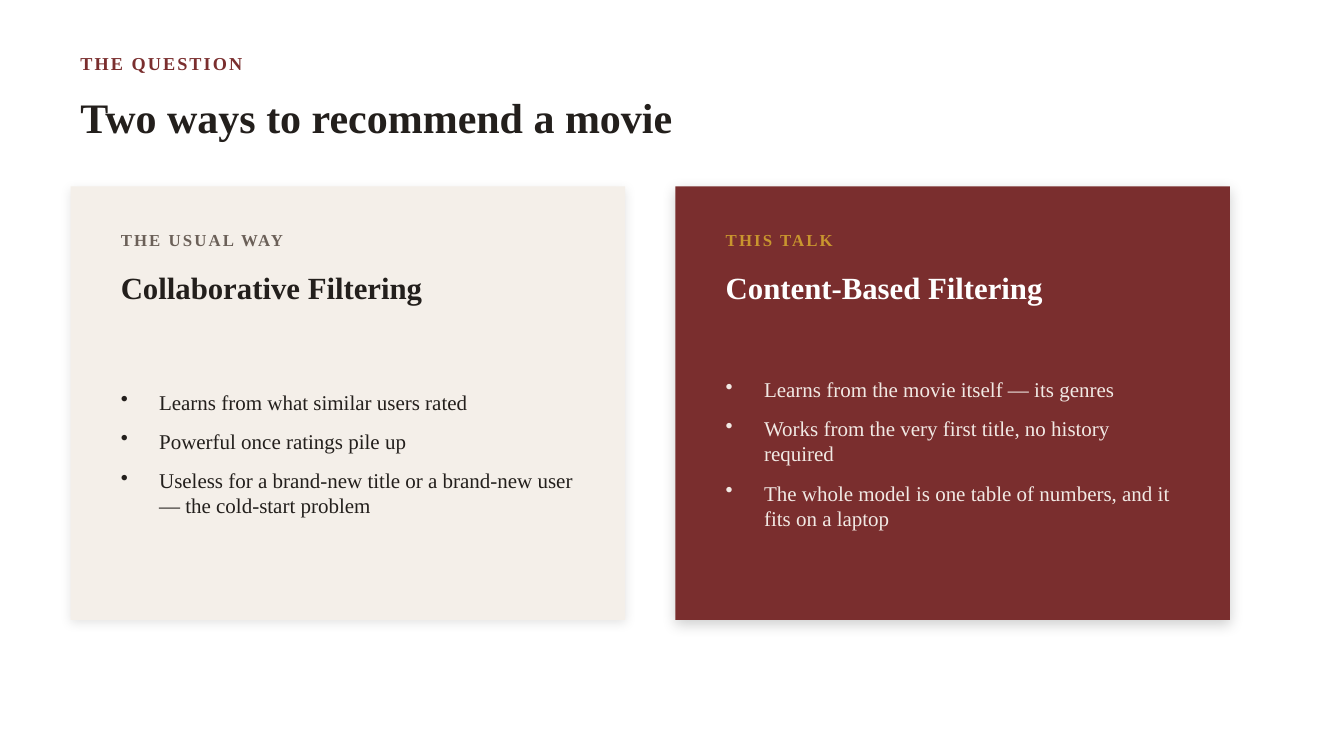
from dataclasses import dataclass

from lxml import etree
from pptx import Presentation
from pptx.dml.color import RGBColor
from pptx.enum.shapes import MSO_SHAPE
from pptx.enum.text import MSO_ANCHOR
from pptx.oxml.ns import qn
from pptx.slide import Slide
from pptx.text.text import TextFrame, _Paragraph
from pptx.util import Pt

RECT = MSO_SHAPE.RECTANGLE
MIDDLE = MSO_ANCHOR.MIDDLE

PX = 9144  # EMU per px, 100 px to the inch
FONT = "Times New Roman"

WHITE = RGBColor(0xFF, 0xFF, 0xFF)
INK = RGBColor(0x23, 0x1F, 0x1C)
MAROON = RGBColor(0x7A, 0x2E, 0x2E)
CREAM = RGBColor(0xF4, 0xEF, 0xE9)
TAUPE = RGBColor(0x6B, 0x60, 0x58)
GOLD = RGBColor(0xC9, 0x96, 0x2E)
BLUSH = RGBColor(0xF1, 0xE9, 0xE4)

CARD_LEFT, CARD_TOP, CARD_W, CARD_H = 70, 185, 550, 430
CARD_GAP, CARD_PAD = 50, 40
BULLET_INDENT = 38


@dataclass(frozen=True)
class Shadow:
    opacity: int  # percent
    blur: int  # points
    distance: int  # points


@dataclass(frozen=True)
class Card:
    label: str
    title: str
    points: tuple[str, ...]
    fill: RGBColor
    label_color: RGBColor
    title_color: RGBColor
    point_color: RGBColor
    shadow: Shadow


CARDS = (
    Card(
        "THE USUAL WAY",
        "Collaborative Filtering",
        (
            "Learns from what similar users rated",
            "Powerful once ratings pile up",
            "Useless for a brand-new title or a brand-new user — the cold-start problem",
        ),
        CREAM, TAUPE, INK, INK, Shadow(10, 8, 2),
    ),
    Card(
        "THIS TALK",
        "Content-Based Filtering",
        (
            "Learns from the movie itself — its genres",
            "Works from the very first title, no history required",
            "The whole model is one table of numbers, and it fits on a laptop",
        ),
        MAROON, GOLD, WHITE, BLUSH, Shadow(18, 10, 3),
    ),
)


def add_frame(s: Slide, x: int, y: int, w: int, h: int) -> TextFrame:
    tf = s.shapes.add_textbox(x * PX, y * PX, w * PX, h * PX).text_frame
    tf.word_wrap = True
    tf.vertical_anchor = MIDDLE
    return tf


def add_run(p: _Paragraph, text: str, size: int, color: RGBColor,
            bold: bool = True, spacing: float = 0) -> None:
    r = p.add_run()
    r.text = text
    r.font.name = FONT
    r.font.size = Pt(size)
    r.font.bold = bold
    r.font.color.rgb = color
    if spacing:
        r.font._element.set("spc", str(int(spacing * 100)))


def add_bullets(tf: TextFrame, points: tuple[str, ...], color: RGBColor) -> None:
    for i, point in enumerate(points):
        p = tf.add_paragraph() if i else tf.paragraphs[0]
        pPr = p._p.get_or_add_pPr()
        pPr.set("marL", str(BULLET_INDENT * PX))
        pPr.set("indent", str(-BULLET_INDENT * PX))
        etree.SubElement(pPr, qn("a:buChar"), char="•")
        p.space_after = Pt(10)
        add_run(p, point, 15, color, bold=False)


def add_panel(s: Slide, x: int, card: Card) -> None:
    sp = s.shapes.add_shape(RECT, x * PX, CARD_TOP * PX, CARD_W * PX, CARD_H * PX)
    sp.fill.solid()
    sp.fill.fore_color.rgb = card.fill
    sp.line.fill.background()
    sp.shadow.inherit = False
    # Soft shadow falling straight down
    effects = sp._element.spPr.find(qn("a:effectLst"))
    outer = etree.SubElement(
        effects, qn("a:outerShdw"), blurRad=str(Pt(card.shadow.blur)),
        dist=str(Pt(card.shadow.distance)), dir=str(90 * 60000),
        algn="bl", rotWithShape="0")
    black = etree.SubElement(outer, qn("a:srgbClr"), val="000000")
    etree.SubElement(black, qn("a:alpha"), val=str(card.shadow.opacity * 1000))


def add_card(s: Slide, x: int, card: Card) -> None:
    add_panel(s, x, card)
    left, width = x + CARD_PAD, CARD_W - 2 * CARD_PAD
    label = add_frame(s, left, CARD_TOP + 35, width, 35)
    add_run(label.paragraphs[0], card.label, 12, card.label_color, spacing=1.5)
    title = add_frame(s, left, CARD_TOP + 70, width, 60)
    add_run(title.paragraphs[0], card.title, 22, card.title_color)
    points = add_frame(s, left, CARD_TOP + 150, width, 230)
    add_bullets(points, card.points, card.point_color)


def main() -> None:
    prs = Presentation()
    prs.slide_width, prs.slide_height = 1333 * PX, 750 * PX
    s = prs.slides.add_slide(prs.slide_layouts[6])

    # Heading
    kicker = add_frame(s, CARD_LEFT, 45, 1000, 35)
    add_run(kicker.paragraphs[0], "THE QUESTION", 13, MAROON, spacing=1.5)
    heading = add_frame(s, CARD_LEFT, 78, 1190, 75)
    add_run(heading.paragraphs[0], "Two ways to recommend a movie", 30, INK)

    # Two approaches side by side
    for i, card in enumerate(CARDS):
        add_card(s, CARD_LEFT + i * (CARD_W + CARD_GAP), card)

    prs.save("out.pptx")


if __name__ == "__main__":
    main()
